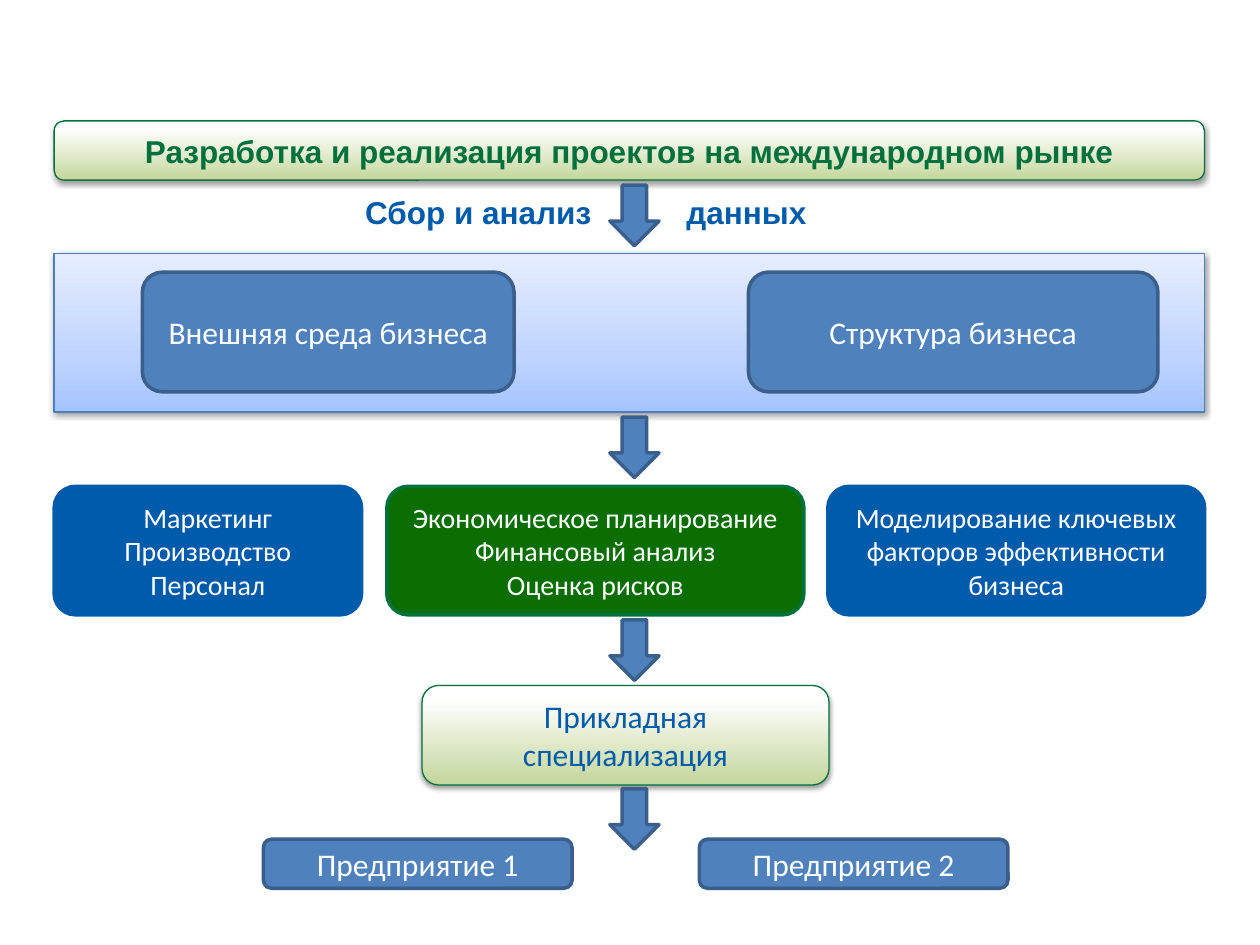
import pptx
import pptx.util
import pptx.dml.color
import pptx.enum.shapes
import pptx.enum.text
import pptx.oxml
import pptx.oxml.ns

RGBColor = pptx.dml.color.RGBColor
Inches = pptx.util.Inches
SHAPE = pptx.enum.shapes.MSO_SHAPE
ALIGN = pptx.enum.text.PP_ALIGN
ANCHOR = pptx.enum.text.MSO_ANCHOR

WHITE = RGBColor(0xFF, 0xFF, 0xFF)
STEEL = RGBColor(0x4F, 0x81, 0xBD)
STEEL_EDGE = RGBColor(0x3A, 0x5F, 0x8C)
PANEL_EDGE = RGBColor(0x4B, 0x7E, 0xBC)
BLUE = RGBColor(0x00, 0x5B, 0xAA)
GREEN = RGBColor(0x0A, 0x6E, 0x02)
GREEN_EDGE = RGBColor(0x00, 0x70, 0x3C)
OLIVE_FADE = [(0, RGBColor(0xC3, 0xD6, 0x9B)), (86, WHITE)]
SKY_FADE = [
    (0, RGBColor(0xA4, 0xC4, 0xFF)),
    (35, RGBColor(0xBF, 0xD4, 0xFF)),
    (100, RGBColor(0xE6, 0xEE, 0xFF)),
]

SLIDE_WIDTH, SLIDE_HEIGHT = 10, 7.5
MARGIN, CONTENT_WIDTH = 0.43, 9.13

TITLE = "Разработка и реализация проектов на международном рынке"
LABEL = "Сбор и анализ\tданных"
SPECIALIZATION = "Прикладная специализация"
ROWS = [
    {"top": 2.16, "height": 0.95, "size": 18, "boxes": [
        (1.13, 2.95, "Внешняя среда бизнеса", STEEL, STEEL_EDGE),
        (5.94, 3.25, "Структура бизнеса", STEEL, STEEL_EDGE)]},
    {"top": 3.86, "height": 1.02, "size": 16, "boxes": [
        (MARGIN, 2.44, "Маркетинг\nПроизводство\nПерсонал", BLUE, BLUE),
        (3.07, 3.31, "Экономическое планирование\nФинансовый анализ\nОценка рисков",
         GREEN, GREEN_EDGE),
        (6.57, 2.99, "Моделирование ключевых факторов эффективности бизнеса", BLUE, BLUE)]},
    {"top": 6.66, "height": 0.39, "size": 18, "boxes": [
        (2.09, 2.45, "Предприятие 1", STEEL, STEEL_EDGE),
        (5.55, 2.45, "Предприятие 2", STEEL, STEEL_EDGE)]},
]
ARROW_LEFT, ARROW_WIDTH, ARROW_HEIGHT = 4.84, 0.39, 0.48
ARROW_TOPS = [1.47, 3.31, 4.92, 6.26]


def write_text(shape, text, size=18, font="Calibri", color=WHITE, bold=False,
               align=ALIGN.CENTER, anchor=ANCHOR.MIDDLE, tab=None):
    frame = shape.text_frame
    frame.word_wrap = True
    frame.vertical_anchor = anchor
    frame.text = text
    for paragraph in frame.paragraphs:
        paragraph.alignment = align
        if tab:
            tabs = pptx.oxml.parse_xml(
                f'<a:tabLst {pptx.oxml.ns.nsdecls("a")}>'
                f'<a:tab pos="{Inches(tab)}" algn="l"/></a:tabLst>')
            paragraph._p.get_or_add_pPr().append(tabs)
        for run in paragraph.runs:
            run.font.size = pptx.util.Pt(size)
            run.font.name = font
            run.font.bold = bold
            run.font.color.rgb = color


def add_box(slide, kind, bounds, fill, edge, edge_width=2):
    shape = slide.shapes.add_shape(kind, *map(Inches, bounds))
    shape.shadow.inherit = False
    shape.line.color.rgb = edge
    shape.line.width = pptx.util.Pt(edge_width)
    if isinstance(fill, list):
        apply_fade(shape, fill)
    else:
        shape.fill.solid()
        shape.fill.fore_color.rgb = fill
    return shape


def apply_fade(shape, stops):
    shape.fill.gradient()
    shape.fill.gradient_angle = 90
    namespace = pptx.oxml.ns.nsdecls("a")
    properties = shape._element.spPr
    stop_list = properties.find(".//" + pptx.oxml.ns.qn("a:gsLst"))
    for stop in list(stop_list):
        stop_list.remove(stop)
    for position, color in stops:
        stop_list.append(pptx.oxml.parse_xml(
            f'<a:gs {namespace} pos="{position * 1000}"><a:srgbClr val="{color}"/></a:gs>'))
    effects = properties.find(pptx.oxml.ns.qn("a:effectLst"))
    effects.append(pptx.oxml.parse_xml(
        f'<a:outerShdw {namespace} blurRad="{pptx.util.Pt(3.1)}" dist="{pptx.util.Pt(1.6)}" '
        'dir="5400000" rotWithShape="0"><a:srgbClr val="000000">'
        '<a:alpha val="38000"/></a:srgbClr></a:outerShdw>'))


def main():
    presentation = pptx.Presentation()
    presentation.slide_width = Inches(SLIDE_WIDTH)
    presentation.slide_height = Inches(SLIDE_HEIGHT)
    slide = presentation.slides.add_slide(presentation.slide_layouts[6])

    add_box(slide, SHAPE.RECTANGLE, (MARGIN, 2.01, CONTENT_WIDTH, 1.26),
            SKY_FADE, PANEL_EDGE, 0.75)
    title = add_box(slide, SHAPE.ROUNDED_RECTANGLE, (MARGIN, 0.96, CONTENT_WIDTH, 0.47),
                    OLIVE_FADE, GREEN_EDGE, 0.75)
    write_text(title, TITLE, font="Arial", color=GREEN_EDGE, bold=True)
    specialization = add_box(slide, SHAPE.ROUNDED_RECTANGLE, (3.35, 5.44, 3.23, 0.79),
                             OLIVE_FADE, GREEN_EDGE, 0.75)
    write_text(specialization, SPECIALIZATION, color=BLUE)

    for row in ROWS:
        for left, width, text, fill, edge in row["boxes"]:
            box = add_box(slide, SHAPE.ROUNDED_RECTANGLE,
                          (left, row["top"], width, row["height"]), fill, edge)
            write_text(box, text, size=row["size"])

    for top in ARROW_TOPS:
        add_box(slide, SHAPE.DOWN_ARROW, (ARROW_LEFT, top, ARROW_WIDTH, ARROW_HEIGHT),
                STEEL, STEEL_EDGE)

    label = slide.shapes.add_textbox(*map(Inches, (2.8, 1.48, 4.57, 0.4)))
    write_text(label, LABEL, font="Arial", color=BLUE, bold=True,
               align=ALIGN.LEFT, anchor=ANCHOR.TOP, tab=2.55)

    presentation.save("out.pptx")


if __name__ == "__main__":
    main()
